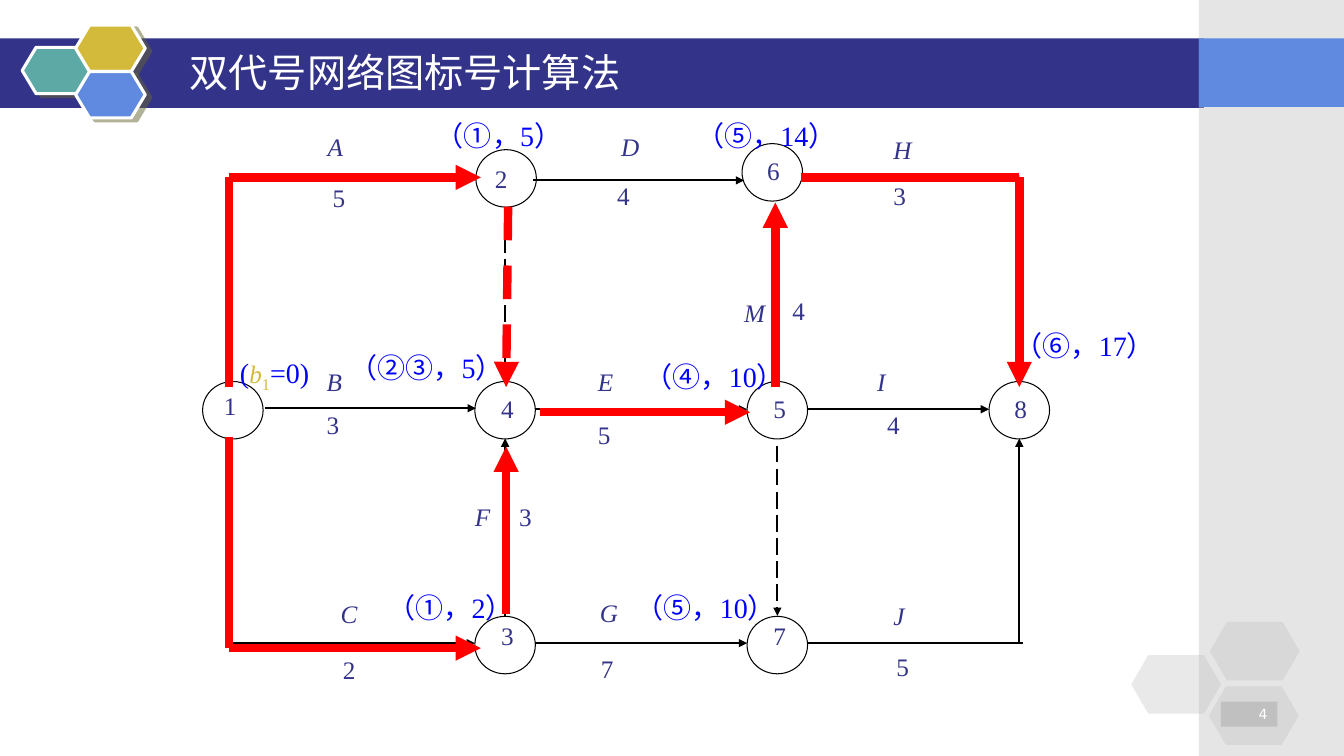
from dataclasses import dataclass

from lxml.etree import SubElement
from pptx import Presentation
from pptx.dml.color import RGBColor
from pptx.enum.dml import MSO_LINE
from pptx.enum.shapes import MSO_CONNECTOR, MSO_SHAPE
from pptx.enum.text import MSO_ANCHOR, PP_ALIGN
from pptx.oxml.ns import qn
from pptx.util import Inches, Pt


@dataclass(frozen=True)
class Theme:
    navy: str = "333389"
    sky: str = "5F8ADF"
    teal: str = "5DA9A5"
    gold: str = "D4BA3A"
    gray: str = "C0C0C0"
    white: str = "FFFFFF"
    black: str = "000000"
    blue: str = "0000FF"
    red: str = "FF0000"
    shadow: str = "666633"
    serif: str = "Times New Roman"
    sans: str = "DejaVu Sans"
    chinese: str = "Noto Sans CJK SC"
    title_size: int = 28
    tag_size: int = 20
    label_size: int = 18
    number_size: int = 10


THEME = Theme()
WIDTH, HEIGHT = 13.33, 7.5

# Node grid: places are (column, row, offset right, offset down)
COLUMNS = (2.31, 5.01, 7.71, 10.11)
ROWS = (1.77, 4.07, 6.4)
NODE_WIDTH, NODE_HEIGHT = 0.6, 0.57
LABEL_WIDTH, LABEL_HEIGHT = 0.3, 0.42
TAG_WIDTH, TAG_HEIGHT = 1.8, 0.34

# Number, node centre, offset of the number from the centre
NODES = [
    ("1", (0, 1, 0, 0), (-0.09, -0.2)),
    ("2", (1, 0, 0.01, 0), (-0.11, -0.15)),
    ("3", (1, 2, 0, 0), (-0.04, -0.25)),
    ("4", (1, 1, 0, 0), (-0.04, -0.17)),
    ("5", (2, 1, 0, 0), (-0.04, -0.17)),
    ("6", (2, 0, -0.05, -0.06), (-0.05, -0.17)),
    ("7", (2, 2, 0, 0), (-0.04, -0.25)),
    ("8", (3, 1, 0, 0), (-0.05, -0.17)),
]

# Activity, its place, duration, its place
ACTIVITIES = [
    ("A", (0, 0, 0.94, -0.47), "5", (0, 0, 0.99, 0.04)),
    ("D", (1, 0, 1.15, -0.47), "4", (1, 0, 1.11, 0.02)),
    ("H", (2, 0, 1.15, -0.44), "3", (2, 0, 1.15, 0.02)),
    ("B", (0, 1, 0.93, -0.44), "3", (0, 1, 0.93, -0.01)),
    ("E", (1, 1, 0.92, -0.44), "5", (1, 1, 0.92, 0.09)),
    ("I", (2, 1, 0.99, -0.44), "4", (2, 1, 1.09, -0.01)),
    ("M", (2, 1, -0.33, -1.12), "4", (2, 1, 0.15, -1.14)),
    ("F", (1, 2, -0.3, -1.43), "3", (1, 2, 0.14, -1.43)),
    ("C", (0, 2, 1.07, -0.46), "2", (0, 2, 1.09, 0.09)),
    ("G", (1, 2, 0.94, -0.47), "7", (1, 2, 0.95, 0.08)),
    ("J", (2, 2, 1.15, -0.44), "5", (2, 2, 1.18, 0.06)),
]

# Label of a node and the middle of its top edge
TAGS = [
    ("（①，5）", (1, 0, -0.06, -0.59)),
    ("（①，2）", (1, 2, -0.54, -0.54)),
    ("（②③，5）", (1, 1, -0.78, -0.59)),
    ("（④，10）", (2, 1, -0.62, -0.5)),
    ("（⑤，14）", (2, 0, -0.11, -0.59)),
    ("（⑤，10）", (2, 2, -0.71, -0.54)),
    ("（⑥，17）", (3, 1, 0.65, -0.81)),
]

# Start, end, then width, arrow and dash where they differ from a thin arrow
NETWORK_LINES = [
    ((1, 0, 0.28, 0.02), (2, 0, -0.33, 0.02), {}),
    ((0, 0, 0, -0.01), (1, 0, -0.3, -0.01), {}),
    ((0, 1, 0.32, -0.02), (1, 1, -0.29, -0.02), {}),
    ((1, 1, 0.3, -0.01), (2, 1, -0.3, -0.01), {}),
    ((2, 1, 0.3, -0.01), (3, 1, -0.3, -0.01), {}),
    ((0, 2, 0, -0.02), (1, 2, -0.3, -0.02), {}),
    ((1, 2, 0.3, -0.02), (2, 2, -0.3, -0.02), {}),
    ((2, 2, 0.3, -0.02), (3, 2, 0.04, -0.02), {"arrow": False}),
    ((2, 1, 0, -0.28), (2, 0, 0, 0.29), {}),
    ((1, 2, 0, -0.29), (1, 1, 0, 0.28), {}),
    ((3, 2, 0, -0.02), (3, 1, 0, 0.28), {}),
    ((3, 0, -0.01, -0.03), (3, 1, 0, -0.26), {}),
    ((1, 0, 0, 0.34), (1, 1, 0, -0.28), {"dash": MSO_LINE.LONG_DASH}),
    ((2, 1, 0, 0.35), (2, 2, 0, -0.29), {"dash": MSO_LINE.LONG_DASH}),
    ((2, 0, 0.25, -0.01), (3, 0, 0.01, -0.01), {"width": 0.75, "arrow": False}),
    ((0, 0, 0, -0.01), (0, 1, 0, -0.26), {"width": 0.75, "arrow": False}),
    ((0, 1, 0, 0.29), (0, 2, 0, 0.01), {"width": 0.75, "arrow": False}),
]
CRITICAL_LINES = [
    ((2, 0, 0.23, -0.01), (3, 0, 0, -0.01), {"arrow": False}),
    ((3, 0, 0, -0.01), (3, 1, 0, -0.23), {}),
    ((2, 1, -0.02, -0.23), (2, 0, -0.02, 0.24), {}),
    ((1, 1, 0.35, 0.02), (2, 1, -0.27, 0.02), {}),
    ((1, 2, 0.01, -0.31), (1, 1, 0.01, 0.36), {}),
    ((1, 0, 0.03, 0.28), (1, 1, 0.01, -0.23), {"dash": MSO_LINE.DASH}),
    ((0, 0, -0.04, -0.01), (1, 0, -0.24, -0.01), {}),
    ((0, 1, -0.04, -0.23), (0, 0, -0.04, -0.01), {"arrow": False}),
    ((0, 2, -0.04, 0.03), (1, 2, -0.24, 0.03), {}),
    ((0, 2, -0.04, 0.03), (0, 1, -0.04, 0.27), {"arrow": False}),
]


def place(column, row, right, down):
    return COLUMNS[column] + right, ROWS[row] + down


def add_run(paragraph, text, size=THEME.label_size, color=THEME.navy,
            font=THEME.serif, italic=False, baseline=None):
    run = paragraph.add_run()
    run.text = text
    run.font.size, run.font.name, run.font.italic = Pt(size), font, italic
    run.font.color.rgb = RGBColor.from_string(color)
    properties = run.font._element
    SubElement(properties, qn("a:ea"), typeface=THEME.chinese)
    if baseline:
        properties.set("baseline", str(baseline * 1000))


def add_text(slide, text, left, top, width=LABEL_WIDTH, height=LABEL_HEIGHT,
             align=PP_ALIGN.LEFT, **run_format):
    box = slide.shapes.add_textbox(*map(Inches, (left, top, width, height)))
    frame = box.text_frame
    frame.word_wrap = True
    frame.margin_left = frame.margin_right = frame.margin_top = frame.margin_bottom = 0
    paragraph = frame.paragraphs[0]
    paragraph.alignment = align
    add_run(paragraph, text, **run_format)
    return paragraph


def add_shape(slide, kind, left, top, width, height, fill=None, line=None,
              line_width=0.75, opacity=100):
    shape = slide.shapes.add_shape(kind, *map(Inches, (left, top, width, height)))
    shape.shadow.inherit = False
    if fill:
        shape.fill.solid()
        shape.fill.fore_color.rgb = RGBColor.from_string(fill)
        if opacity < 100:
            color = shape._element.spPr.find(".//" + qn("a:srgbClr"))
            SubElement(color, qn("a:alpha"), val=str(opacity * 1000))
    else:
        shape.fill.background()
    if line:
        shape.line.color.rgb = RGBColor.from_string(line)
        shape.line.width = Pt(line_width)
    else:
        shape.line.fill.background()
    return shape


def add_line(slide, start, end, color=THEME.black, width=1.5, arrow=True, dash=None):
    points = map(Inches, place(*start) + place(*end))
    connector = slide.shapes.add_connector(MSO_CONNECTOR.STRAIGHT, *points)
    connector.line.color.rgb = RGBColor.from_string(color)
    connector.line.width = Pt(width)
    if dash:
        connector.line.dash_style = dash
    if arrow:
        SubElement(connector.line._get_or_add_ln(), qn("a:tailEnd"), type="triangle")
    SubElement(connector._element.spPr, qn("a:effectLst"))


def add_shadow(shape):
    effects = shape._element.spPr.find(qn("a:effectLst"))
    shadow = SubElement(effects, qn("a:outerShdw"), dist=str(Pt(4.5)), dir=str(27 * 60000))
    color = SubElement(shadow, qn("a:srgbClr"), val=THEME.shadow)
    SubElement(color, qn("a:alpha"), val="50000")


def add_background(slide):
    side = 11.89
    add_shape(slide, MSO_SHAPE.RECTANGLE, 0, 0.38, 11.94, 0.69, THEME.navy)
    add_shape(slide, MSO_SHAPE.RECTANGLE, side, 0, WIDTH - side, HEIGHT, THEME.gray, opacity=40)
    add_shape(slide, MSO_SHAPE.RECTANGLE, side, 0.38, WIDTH - side, 0.68, THEME.sky)
    for left, top, fill in ((0.22, 0.47, THEME.teal), (0.75, 0.25, THEME.gold),
                            (0.75, 0.71, THEME.sky)):
        hexagon = add_shape(slide, MSO_SHAPE.HEXAGON, left, top, 0.69, 0.46, fill,
                            THEME.white, 2.25)
        hexagon.adjustments[0] = 0.3
        add_shadow(hexagon)
    for left, top in ((11.22, 6.5), (12, 6.17), (11.99, 6.81)):
        hexagon = add_shape(slide, MSO_SHAPE.HEXAGON, left, top, 0.89, 0.58, THEME.gray, opacity=35)
        hexagon.adjustments[0] = 0.29
    # Slide number
    number = add_shape(slide, MSO_SHAPE.RECTANGLE, 12.11, 6.96, 0.56, 0.25, THEME.gray)
    paragraph = number.text_frame.paragraphs[0]
    paragraph.alignment = PP_ALIGN.RIGHT
    add_run(paragraph, "4", size=THEME.number_size, color=THEME.white, font=THEME.sans)


def add_title(slide, text):
    title = slide.shapes.title
    title.left, title.top, title.width, title.height = map(Inches, (1.78, 0.42, 9.67, 0.58))
    title.text_frame.vertical_anchor = MSO_ANCHOR.MIDDLE
    paragraph = title.text_frame.paragraphs[0]
    paragraph.alignment = PP_ALIGN.LEFT
    add_run(paragraph, text, size=THEME.title_size, color=THEME.white, font=THEME.chinese)
    slide.shapes._spTree.append(title._element)  # in front of the banner


def add_network(slide):
    for start, end, style in NETWORK_LINES:
        add_line(slide, start, end, **style)
    for number, centre, (right, down) in NODES:
        x, y = place(*centre)
        add_shape(slide, MSO_SHAPE.OVAL, x - NODE_WIDTH / 2, y - NODE_HEIGHT / 2,
                  NODE_WIDTH, NODE_HEIGHT, line=THEME.black)
        add_text(slide, number, x + right, y + down)
    for activity, activity_place, duration, duration_place in ACTIVITIES:
        add_text(slide, activity, *place(*activity_place), italic=True)
        add_text(slide, duration, *place(*duration_place))


def add_tags(slide):
    tag_format = {"size": THEME.tag_size, "color": THEME.blue}
    for text, middle in TAGS:
        x, y = place(*middle)
        add_text(slide, text, x - TAG_WIDTH / 2, y, TAG_WIDTH, TAG_HEIGHT,
                 PP_ALIGN.CENTER, **tag_format)
    # Start label with a subscript
    paragraph = add_text(slide, "(", *place(0, 1, 0.07, -0.54), 0.85, TAG_HEIGHT, **tag_format)
    add_run(paragraph, "b", color=THEME.gold, italic=True)
    add_run(paragraph, "1", size=THEME.tag_size, color=THEME.gold, baseline=-25)
    add_run(paragraph, "=0)", **tag_format)


def main():
    presentation = Presentation()
    presentation.slide_width, presentation.slide_height = Inches(WIDTH), Inches(HEIGHT)
    slide = presentation.slides.add_slide(presentation.slide_layouts[5])
    add_background(slide)
    add_network(slide)
    add_tags(slide)
    # Critical path
    for start, end, style in CRITICAL_LINES:
        add_line(slide, start, end, **{"color": THEME.red, "width": 6, **style})
    add_title(slide, "双代号网络图标号计算法")
    presentation.save("out.pptx")


if __name__ == "__main__":
    main()
